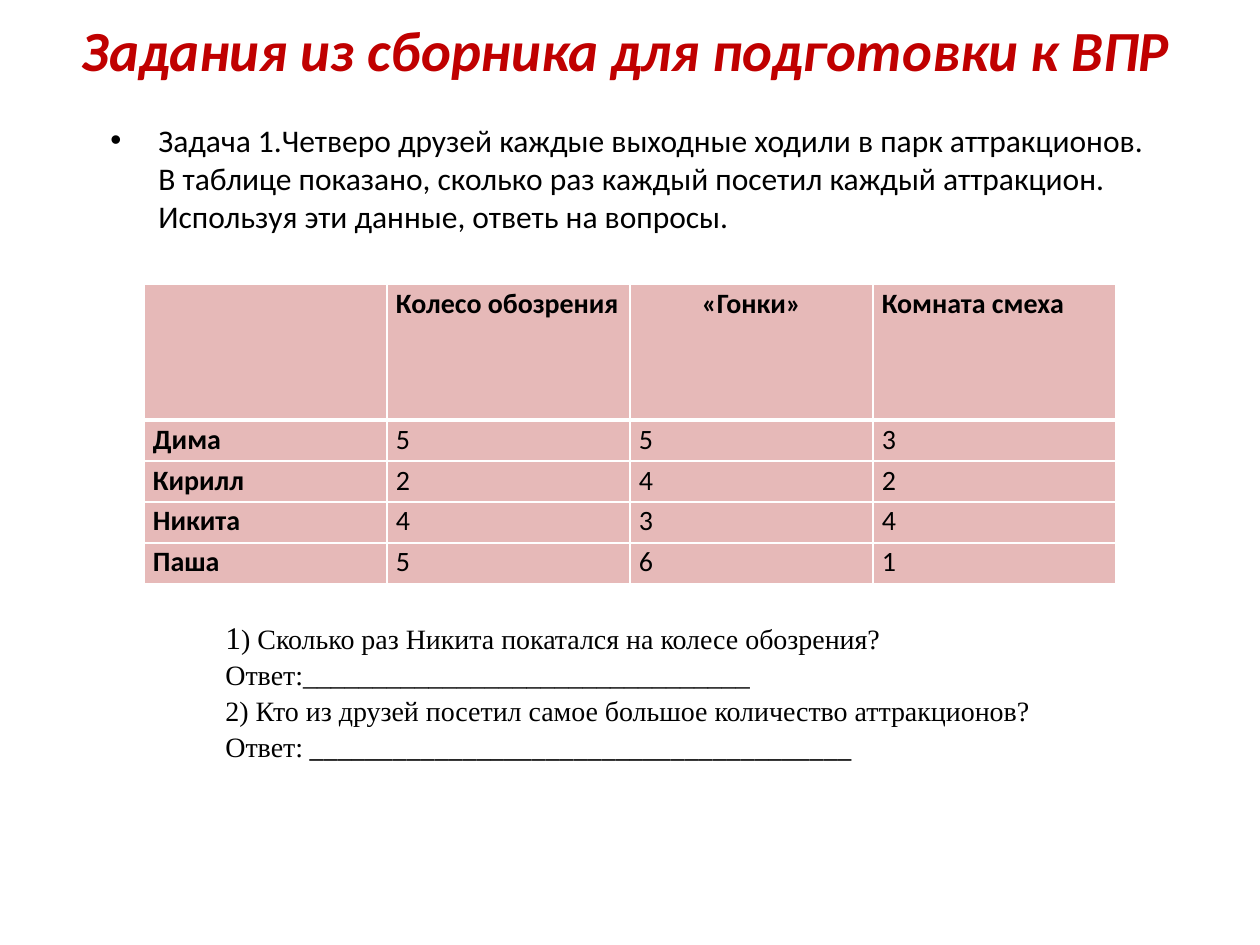
import pptx
import pptx.dml.color
import pptx.enum.text
import pptx.oxml
import pptx.oxml.ns
import pptx.util

EMU_PER_PX = 914400 / 126
ALIGN = pptx.enum.text.PP_ALIGN
BLACK, WHITE, RED, PINK = "000000", "FFFFFF", "C00000", "E6B9B8"
NS = pptx.oxml.ns.nsdecls("a")

VISITS = [
    ["", "Колесо обозрения", "«Гонки»", "Комната смеха"],
    ["Дима", "5", "5", "3"],
    ["Кирилл", "2", "4", "2"],
    ["Никита", "4", "3", "4"],
    ["Паша", "5", "6", "1"],
]
# Each question line is a list of (text, size, font)
SERIF = "Times New Roman"
QUESTIONS = [
    [("1", 18, SERIF), (") Сколько раз Никита покатался на колесе обозрения?", 16, SERIF)],
    [("Ответ:" + "_" * 32, 16, SERIF)],
    [("2) Кто из друзей посетил самое большое количество аттракционов?", 16, SERIF)],
    [("Ответ:", 16, SERIF), (" " + "_" * 39, 16, "Calibri")],
]


def px(length):
    return pptx.util.Emu(round(length * EMU_PER_PX))


def rgb(color):
    return pptx.dml.color.RGBColor.from_string(color)


def style(font, size, color=BLACK, name="Calibri", bold=False, italic=False):
    font.size = pptx.util.Pt(size)
    font.name = name
    font.bold = bold
    font.italic = italic
    font.color.rgb = rgb(color)


def add_text_frame(slide, left, top, width, height, inset_top=6):
    frame = slide.shapes.add_textbox(px(left), px(top), px(width), px(height)).text_frame
    frame.word_wrap = True
    frame.margin_top = px(inset_top)
    return frame


def add_bullet(paragraph, indent):
    properties = paragraph._p.get_or_add_pPr()
    properties.set("marL", str(px(indent)))
    properties.set("indent", str(-px(indent)))
    properties.append(pptx.oxml.parse_xml(f'<a:buFont {NS} typeface="Arial"/>'))
    properties.append(pptx.oxml.parse_xml(f'<a:buChar {NS} char="•"/>'))


def set_borders(cell, top, bottom):
    properties = cell._tc.get_or_add_tcPr()
    for side, points in (("L", 1), ("R", 1), ("T", top), ("B", bottom)):
        properties.append(pptx.oxml.parse_xml(
            f'<a:ln{side} {NS} w="{pptx.util.Pt(points)}"><a:solidFill>'
            f'<a:srgbClr val="{WHITE}"/></a:solidFill></a:ln{side}>'))


def fill_cell(cell, text, row, column):
    set_borders(cell, top=3 if row == 1 else 1, bottom=3 if row == 0 else 1)
    cell.fill.solid()
    cell.fill.fore_color.rgb = rgb(PINK)
    cell.margin_left = cell.margin_right = px(9)
    cell.margin_top = cell.margin_bottom = 0
    paragraph = cell.text_frame.paragraphs[0]
    paragraph.text = text
    paragraph.line_spacing = 1.07
    if text == "«Гонки»":
        paragraph.alignment = ALIGN.CENTER
    style(paragraph.font, 16, bold=row == 0 or column == 0)


def add_visits_table(slide, left, top, column_width, header_height, row_height):
    rows, columns = len(VISITS), len(VISITS[0])
    table = slide.shapes.add_table(
        rows, columns, px(left), px(top), px(columns * column_width),
        px(header_height + (rows - 1) * row_height)).table
    for column in table.columns:
        column.width = px(column_width)
    for r, values in enumerate(VISITS):
        table.rows[r].height = px(row_height if r else header_height)
        for c, text in enumerate(values):
            fill_cell(table.cell(r, c), text, r, c)


def add_questions(slide):
    frame = add_text_frame(slide, 213, 568, 949, 203, inset_top=47)
    for number, line in enumerate(QUESTIONS):
        paragraph = frame.add_paragraph() if number else frame.paragraphs[0]
        paragraph.line_spacing = 1.07
        for text, size, name in line:
            run = paragraph.add_run()
            run.text = text
            style(run.font, size, name=name)


def main():
    presentation = pptx.Presentation()
    presentation.slide_width, presentation.slide_height = px(1260), px(945)
    slide = presentation.slides.add_slide(presentation.slide_layouts[6])

    # Title
    title = add_text_frame(slide, 59, 0, 1134, 91, inset_top=12)
    title.vertical_anchor = pptx.enum.text.MSO_ANCHOR.MIDDLE
    heading = title.paragraphs[0]
    heading.text = "Задания из сборника для подготовки к ВПР"
    heading.alignment = ALIGN.CENTER
    style(heading.font, 32.4, RED, bold=True, italic=True)

    # Problem statement
    problem = add_text_frame(slide, 98, 115, 1064, 732).paragraphs[0]
    problem.text = (
        "Задача 1.Четверо друзей каждые выходные ходили в парк аттракционов. "
        "В таблице показано, сколько раз каждый посетил каждый аттракцион. "
        "Используя эти данные, ответь на вопросы.")
    add_bullet(problem, 48)
    style(problem.font, 18)

    # Visits per friend, then the questions
    add_visits_table(slide, 144, 284, column_width=243, header_height=136, row_height=41)
    add_questions(slide)

    presentation.save("out.pptx")


if __name__ == "__main__":
    main()
